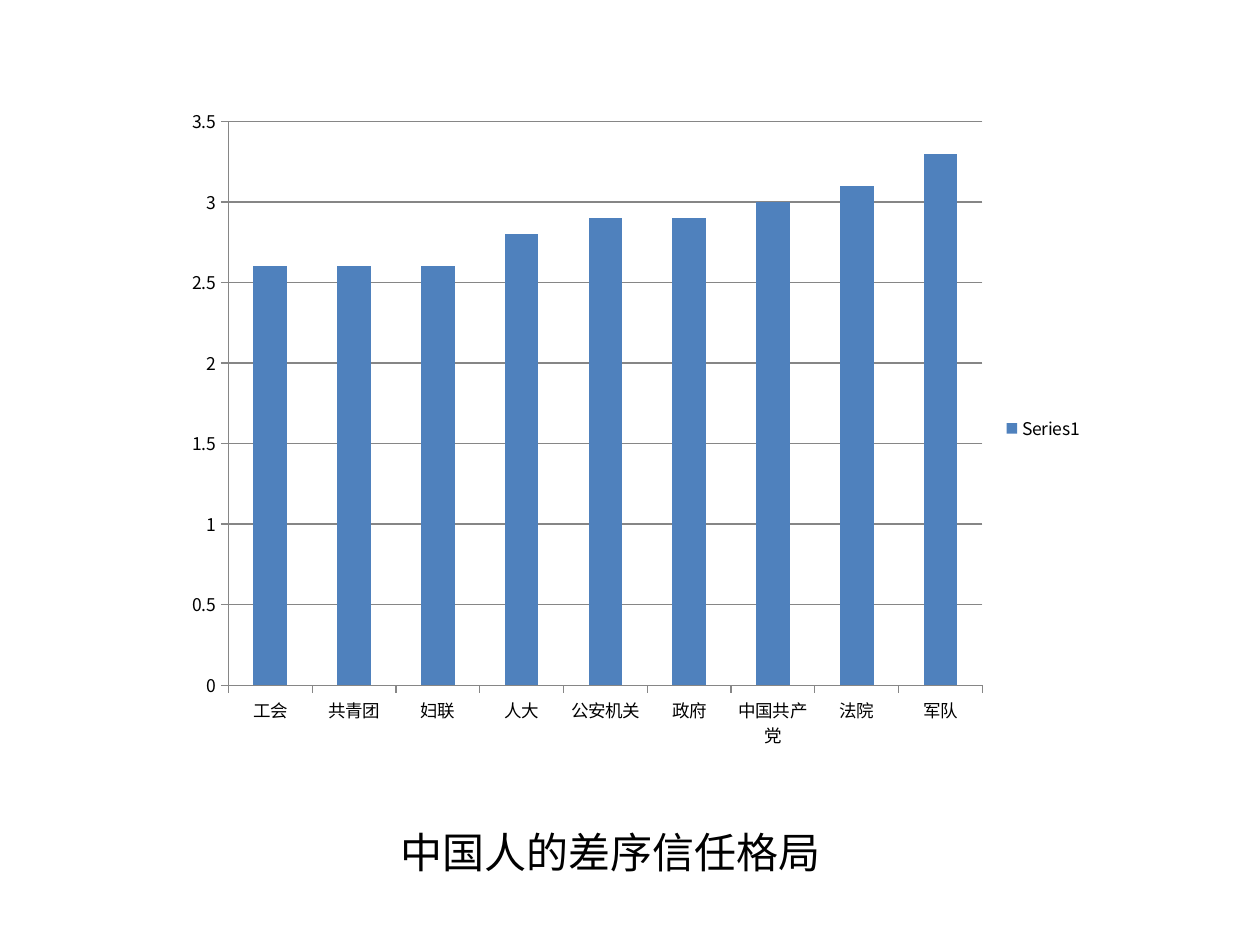
from lxml import etree
from pptx import Presentation
from pptx.chart.data import CategoryChartData
from pptx.dml.color import RGBColor
from pptx.enum import chart as ch, text
from pptx.oxml.ns import qn
from pptx.util import Inches, Pt

FONT = "Noto Sans CJK SC"
CAPTION = "中国人的差序信任格局"
SERIES = "Series1"
TRUST = [
    ("工会", 2.6),
    ("共青团", 2.6),
    ("妇联", 2.6),
    ("人大", 2.8),
    ("公安机关", 2.9),
    ("政府", 2.9),
    ("中国共产党", 3.0),
    ("法院", 3.1),
    ("军队", 3.3),
]


def color(hex_value):
    return RGBColor.from_string(hex_value)


def style_font(font, size):
    """Set size, black colour and the typeface for Latin and Chinese text."""
    font.size = Pt(size)
    font.color.rgb = color("000000")
    font.name = FONT
    latin = font._element.find(qn("a:latin"))
    east_asian = etree.Element(qn("a:ea"), typeface=FONT)
    latin.addnext(east_asian)


def style_line(line):
    line.color.rgb = color("868686")
    line.width = Pt(0.75)


def add_trust_chart(slide):
    data = CategoryChartData()
    data.categories = [name for name, _ in TRUST]
    data.add_series(SERIES, [score for _, score in TRUST])
    chart = slide.shapes.add_chart(
        ch.XL_CHART_TYPE.COLUMN_CLUSTERED,
        Inches(1.38), Inches(0.76), Inches(7.32), Inches(5.28), data,
    ).chart
    style_font(chart.font, 10)
    chart.has_title = False
    chart.has_legend = True
    chart.legend.position = ch.XL_LEGEND_POSITION.RIGHT
    chart.legend.include_in_layout = False

    columns = chart.plots[0]
    columns.gap_width = 150
    columns.vary_by_categories = False
    fill = columns.series[0].format.fill
    fill.solid()
    fill.fore_color.rgb = color("4F81BD")

    scores = chart.value_axis
    scores.minimum_scale, scores.maximum_scale, scores.major_unit = 0, 3.5, 0.5
    scores.has_major_gridlines = True
    style_line(scores.major_gridlines.format.line)
    for axis in (chart.category_axis, scores):
        axis.major_tick_mark = ch.XL_TICK_MARK.OUTSIDE
        style_line(axis.format.line)


def add_caption(slide):
    caption = slide.shapes.title
    caption.left, caption.top = Inches(2.64), Inches(6.51)
    caption.width, caption.height = Inches(4.41), Inches(0.5)
    frame = caption.text_frame
    frame.text = CAPTION
    frame.word_wrap = True
    frame.auto_size = text.MSO_AUTO_SIZE.SHAPE_TO_FIT_TEXT
    frame.vertical_anchor = text.MSO_ANCHOR.TOP
    paragraph = frame.paragraphs[0]
    paragraph.alignment = text.PP_ALIGN.CENTER
    style_font(paragraph.runs[0].font, 24)


def main():
    deck = Presentation()
    deck.slide_width, deck.slide_height = Inches(10), Inches(7.5)
    slide = deck.slides.add_slide(deck.slide_layouts.get_by_name("Title Only"))
    add_trust_chart(slide)
    add_caption(slide)
    deck.save("out.pptx")


if __name__ == "__main__":
    main()
